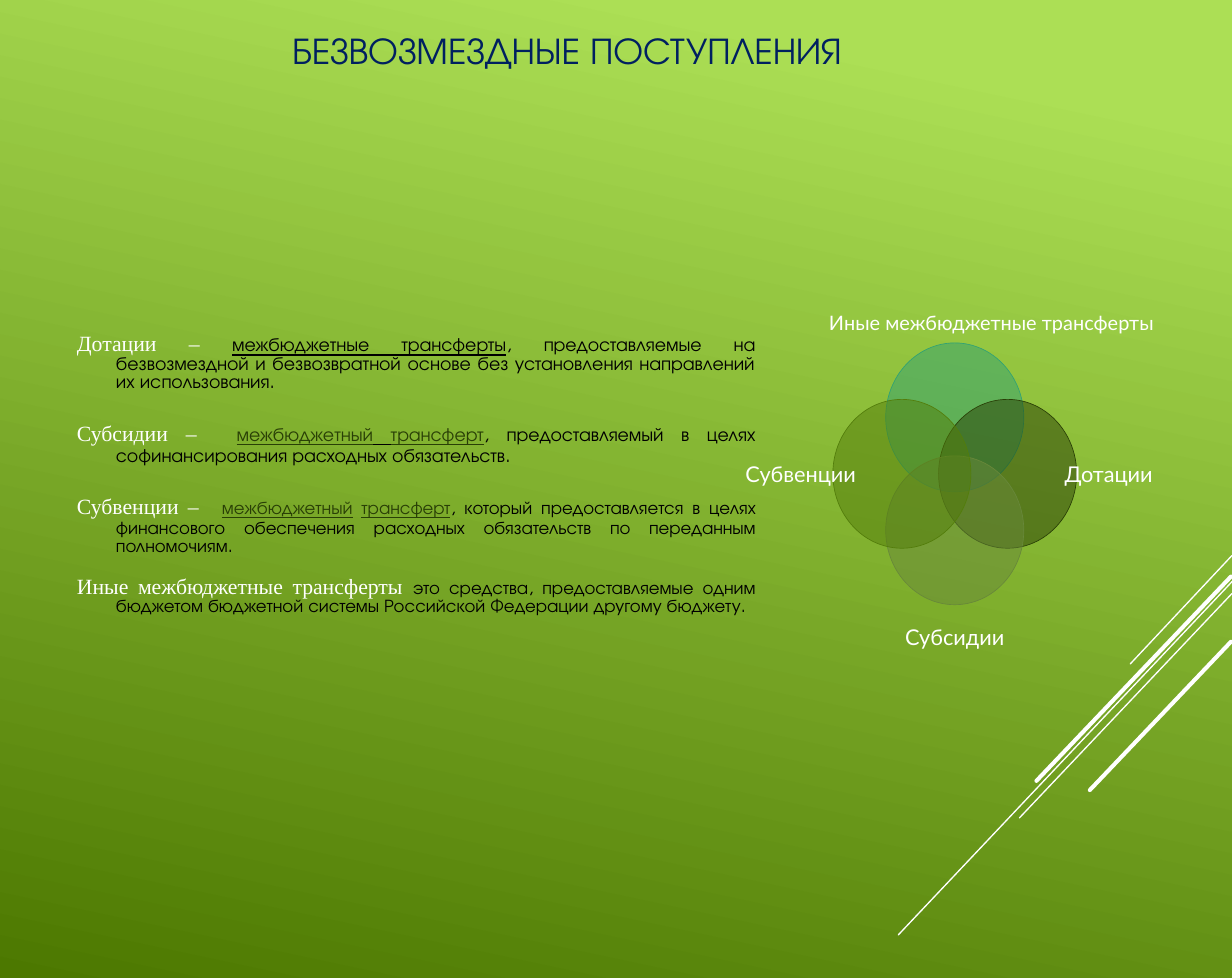
from dataclasses import dataclass

from lxml.etree import SubElement
from pptx import Presentation
from pptx.dml.color import RGBColor
from pptx.enum.shapes import MSO_CONNECTOR, MSO_SHAPE
from pptx.enum.text import MSO_ANCHOR, MSO_AUTO_SIZE, PP_ALIGN
from pptx.oxml.ns import qn
from pptx.slide import Slide
from pptx.util import Cm, Pt

COLORS = {
    "light": "ACDF55", "dark": "4C7800", "white": "FFFFFF", "black": "000000",
    "navy": "002060", "link": "293F06", "olive": "3E5E08",
}
SERIF, SANS, LABEL = "Times New Roman", "TeX Gyre Adventor", "Lato"
CENTER_X, CENTER_Y = 18.6, 9.23
CIRCLE_W, CIRCLE_H = 2.69, 2.9
STEP_X, STEP_Y = 1.03, 1.1
LABEL_W, LABEL_H = 2.6, 0.71


@dataclass
class Ray:
    x1: float
    y1: float
    x2: float
    y2: float
    width: float = 0.75


@dataclass
class Piece:
    text: str
    size: float = 10.5
    color: str = "black"
    font: str = SANS
    underline: bool = False


@dataclass
class Circle:
    dx: int
    dy: int
    color: str


@dataclass
class Label:
    text: str
    dx: float
    dy: float


RAYS = [
    Ray(24, 10.82, 22.02, 12.93),
    Ray(24, 11.33, 17.5, 18.21),
    Ray(24, 11.56, 19.86, 15.93),
    Ray(23.98, 11.23, 20.19, 15.21, 2.25),
    Ray(23.98, 12.5, 21.23, 15.39, 2.25),
]
CIRCLES = [
    Circle(0, -1, "31A274"),
    Circle(1, 0, "293F06"),
    Circle(0, 1, "68883A"),
    Circle(-1, 0, "537D0B"),
]
LABELS = [Label("Дотации", 3, 0), Label("Субсидии", 0, 3.18), Label("Субвенции", -3, 0)]


def term(text: str) -> Piece:
    return Piece(text, 12, "white", SERIF)


def transfer(size: float, gap_underlined: bool) -> list[Piece]:
    return [
        Piece(" ", 18.9, "olive"),
        Piece("межбюджетный", size, "link", underline=True),
        Piece(" ", size, underline=gap_underlined),
        Piece("трансферт", size, "link", underline=True),
    ]


DEFINITIONS = [
    [term("Дотации – "), Piece("межбюджетные трансферты", underline=True),
     Piece(", предоставляемые на безвозмездной и безвозвратной основе "
           "без установления направлений их использования.")],
    [term("Субсидии – "), *transfer(10.5, True),
     Piece(", предоставляемый в целях софинансирования расходных обязательств.")],
    [term("Субвенции – "), *transfer(10, False),
     Piece(", который предоставляется в целях финансового обеспечения "
           "расходных обязательств по переданным полномочиям.", 10)],
    [term("Иные межбюджетные трансферты "),
     Piece("это средства, предоставляемые одним бюджетом бюджетной системы "
           "Российской Федерации другому бюджету.", 10)],
]


def rgb(name: str) -> RGBColor:
    return RGBColor.from_string(COLORS.get(name, name))


def set_font(font, name: str, size: float, color: str) -> None:
    font.name, font.size = name, Pt(size)
    font.color.rgb = rgb(color)


def add_background(s: Slide) -> None:
    fill = s.background.fill
    fill.gradient()
    fill.gradient_angle = 258
    for stop, position, color in zip(fill.gradient_stops, (0.1, 1), ("light", "dark")):
        stop.position = position
        stop.color.rgb = rgb(color)


def add_ray(s: Slide, ray: Ray) -> None:
    c = s.shapes.add_connector(
        MSO_CONNECTOR.STRAIGHT, Cm(ray.x1), Cm(ray.y1), Cm(ray.x2), Cm(ray.y2))
    c.line.color.rgb = rgb("white")
    c.line.width = Pt(ray.width)
    c.line._ln.set("cap", "rnd")
    SubElement(c._element.spPr, qn("a:effectLst"))


def add_title(s: Slide) -> None:
    sp = s.shapes.title
    sp.left, sp.top, sp.width, sp.height = Cm(2.59), Cm(0.51), Cm(17.35), Cm(0.89)
    tf = sp.text_frame
    tf.text = "БЕЗВОЗМЕЗДНЫЕ ПОСТУПЛЕНИЯ"
    tf.auto_size = MSO_AUTO_SIZE.NONE
    tf.vertical_anchor = MSO_ANCHOR.MIDDLE
    tf.margin_left = Cm(3.1)
    p = tf.paragraphs[0]
    p.alignment = PP_ALIGN.LEFT
    set_font(p.font, SANS, 20.7, "navy")


def add_definitions(s: Slide) -> None:
    tf = s.shapes.add_textbox(Cm(1.25), Cm(2.88), Cm(13.72), Cm(12.78)).text_frame
    tf.word_wrap = True
    tf.vertical_anchor = MSO_ANCHOR.MIDDLE
    for i, pieces in enumerate(DEFINITIONS):
        p = tf.add_paragraph() if i else tf.paragraphs[0]
        p.alignment = PP_ALIGN.JUSTIFY
        p.line_spacing, p.space_before, p.space_after = 0.8, Pt(6.6), Pt(5.7)
        pPr = p._p.get_or_add_pPr()
        pPr.set("marL", str(Cm(0.76)))
        pPr.set("indent", str(-Cm(0.76)))
        for piece in pieces:
            r = p.add_run()
            r.text = piece.text
            set_font(r.font, piece.font, piece.size, piece.color)
            r.font.underline = piece.underline


def add_circle(s: Slide, circle: Circle) -> None:
    left = CENTER_X + circle.dx * STEP_X - CIRCLE_W / 2
    top = CENTER_Y + circle.dy * STEP_Y - CIRCLE_H / 2
    sp = s.shapes.add_shape(MSO_SHAPE.OVAL, Cm(left), Cm(top), Cm(CIRCLE_W), Cm(CIRCLE_H))
    sp.shadow.inherit = False
    sp.fill.solid()
    sp.fill.fore_color.rgb = rgb(circle.color)
    color = sp._element.spPr.find(qn("a:solidFill")).find(qn("a:srgbClr"))
    SubElement(color, qn("a:alpha"), val="50000")
    sp.line.color.rgb = rgb(circle.color)
    sp.line.width = Pt(0.37)


def add_label(s: Slide, label: Label) -> None:
    left = CENTER_X + label.dx - LABEL_W / 2
    top = CENTER_Y + label.dy - LABEL_H / 2
    tf = s.shapes.add_textbox(Cm(left), Cm(top), Cm(LABEL_W), Cm(LABEL_H)).text_frame
    tf.margin_left = tf.margin_right = tf.margin_top = tf.margin_bottom = 0
    tf.word_wrap = True
    tf.vertical_anchor = MSO_ANCHOR.MIDDLE
    p = tf.paragraphs[0]
    p.text, p.alignment = label.text, PP_ALIGN.CENTER
    set_font(p.font, LABEL, 12, "white")


def add_top_label(s: Slide) -> None:
    tf = s.shapes.add_textbox(Cm(15.9), Cm(5.92), Cm(6.88), Cm(0.74)).text_frame
    tf.word_wrap = False
    tf.auto_size = MSO_AUTO_SIZE.SHAPE_TO_FIT_TEXT
    p = tf.paragraphs[0]
    p.text = "Иные межбюджетные трансферты"
    set_font(p.font, LABEL, 11, "white")


def main() -> None:
    prs = Presentation()
    prs.slide_width, prs.slide_height = Cm(24), Cm(19.05)
    s = prs.slides.add_slide(prs.slide_layouts[5])
    add_background(s)
    for ray in RAYS:
        add_ray(s, ray)
    add_title(s)
    add_definitions(s)
    for circle in CIRCLES:
        add_circle(s, circle)
    for label in LABELS:
        add_label(s, label)
    add_top_label(s)
    prs.save("out.pptx")


if __name__ == "__main__":
    main()
